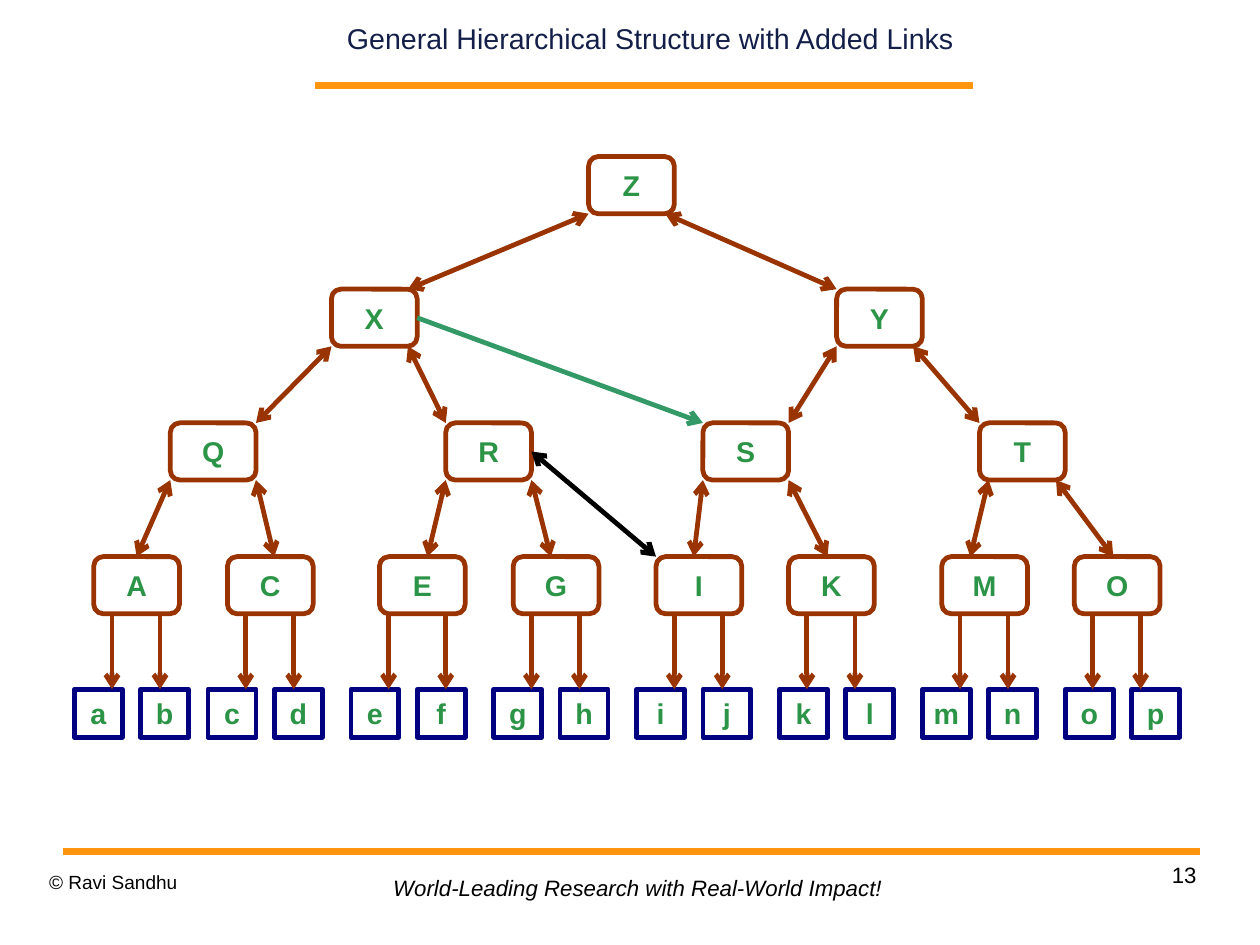
from lxml import etree
from pptx import Presentation
from pptx.dml.color import RGBColor
from pptx.enum import shapes, text
from pptx.oxml import ns
from pptx.util import Inches, Pt

BROWN, NAVY, ORANGE = "993300", "000080", "FF950E"
LEVEL_TOPS = [1.37, 2.53, 3.7, 4.87]
LEAF_TOP, LEAF_SIZE, LEAF_PITCH = 6.03, 0.42, 0.58
NODE_WIDTH, NODE_HEIGHT = 0.75, 0.5
NODES = [
    {"Z": 5.15},
    {"X": 2.9, "Y": 7.32},
    {"Q": 1.49, "R": 3.9, "S": 6.15, "T": 8.57},
    {"A": 0.82, "C": 1.99, "E": 3.32, "G": 4.49,
     "I": 5.74, "K": 6.9, "M": 8.24, "O": 9.4},
]
LEAF_PAIRS = {"ab": 0.65, "cd": 1.82, "ef": 3.07, "gh": 4.32,
              "ij": 5.57, "kl": 6.82, "mn": 8.07, "op": 9.32}
LINKS = [
    [(5.15, 3.57), (5.82, 7.32)],
    [(2.9, 2.24), (3.57, 3.9), (7.32, 6.9), (7.99, 8.57)],
    [(1.49, 1.2), (2.24, 2.4), (3.9, 3.74), (4.65, 4.82),
     (6.15, 6.07), (6.9, 7.24), (8.65, 8.49), (9.24, 9.74)],
]


def color(value):
    """Return the colour for a hex string."""
    return RGBColor.from_string(value)


def write(frame, content, size=18, fill="000000", bold=False, italic=False,
          align="LEFT", anchor="TOP", margins=None, wrap=True, spacing=None):
    """Put one formatted paragraph into a text frame."""
    frame.auto_size = text.MSO_AUTO_SIZE.NONE
    frame.word_wrap = wrap
    frame.vertical_anchor = getattr(text.MSO_ANCHOR, anchor)
    if margins is not None:
        frame.margin_left = frame.margin_right = Inches(margins[0])
        frame.margin_top = frame.margin_bottom = Inches(margins[1])
    paragraph = frame.paragraphs[0]
    paragraph.alignment = getattr(text.PP_ALIGN, align)
    paragraph.line_spacing = spacing
    run = paragraph.add_run()
    run.text = content
    run.font.name = "Arial"
    run.font.size = Pt(size)
    run.font.bold = bold
    run.font.italic = italic
    run.font.color.rgb = color(fill)


def add_title(slide, content):
    """Place and fill the title placeholder."""
    title = slide.shapes.title
    title.left, title.top = Inches(2.85), Inches(0.05)
    title.width, title.height = Inches(5.68), Inches(0.56)
    write(title.text_frame, content, fill="131F49", align="CENTER",
          anchor="MIDDLE", margins=(0, 0))


def add_label(slide, content, left, top, width, height, **style):
    """Add a text box with one line of text."""
    box = slide.shapes.add_textbox(Inches(left), Inches(top), Inches(width), Inches(height))
    write(box.text_frame, content, **style)


def add_box(slide, name, left, top, width, height, kind, outline):
    """Add an unfilled box holding a node name."""
    shape = slide.shapes.add_shape(kind, Inches(left), Inches(top), Inches(width), Inches(height))
    shape.shadow.inherit = False
    shape.fill.background()
    shape.line.color.rgb = color(outline)
    shape.line.width = Pt(3)
    write(shape.text_frame, name, fill="2C9447", bold=True, align="CENTER",
          anchor="MIDDLE", wrap=False)
    return shape


def add_line(slide, start, end, stroke=BROWN, width=3, ends=()):
    """Add a straight line with arrowheads at the named ends."""
    line = slide.shapes.add_connector(
        shapes.MSO_CONNECTOR.STRAIGHT, *map(Inches, start + end))
    line.line.color.rgb = color(stroke)
    line.line.width = Pt(width)
    outline = line.line._get_or_add_ln()
    for end_name in ends:
        etree.SubElement(outline, ns.qn(f"a:{end_name}"), type="arrow")
    etree.SubElement(line._element.spPr, ns.qn("a:effectLst"))
    return line


def add_nodes(slide):
    """Add the inner nodes of the tree and return them by name."""
    return {
        name: add_box(slide, name, left, top, NODE_WIDTH, NODE_HEIGHT,
                      shapes.MSO_SHAPE.ROUNDED_RECTANGLE, BROWN)
        for top, level in zip(LEVEL_TOPS, NODES)
        for name, left in level.items()
    }


def add_leaves(slide):
    """Add each pair of leaves with the arrows from its parent."""
    for (parent, parent_left), (pair, left) in zip(NODES[-1].items(), LEAF_PAIRS.items()):
        offsets = (0.08 if parent == "E" else 0.16, 0.58)
        for index, (leaf, offset) in enumerate(zip(pair, offsets)):
            add_box(slide, leaf, left + index * LEAF_PITCH, LEAF_TOP,
                    LEAF_SIZE, LEAF_SIZE, shapes.MSO_SHAPE.RECTANGLE, NAVY)
            x = parent_left + offset
            add_line(slide, (x, LEVEL_TOPS[-1] + NODE_HEIGHT), (x, LEAF_TOP), ends=["tailEnd"])


def add_links(slide, nodes):
    """Add the links between levels and the two added links."""
    both = ["headEnd", "tailEnd"]
    for upper, lower, links in zip(LEVEL_TOPS, LEVEL_TOPS[1:], LINKS):
        for start, end in links:
            link = add_line(slide, (start, upper + NODE_HEIGHT), (end, lower), ends=both)
            if (start, end) == LINKS[2][0]:
                link.end_connect(nodes["A"], 0)
    x_to_s = add_line(slide, (3.65, 2.78), (6.15, 3.7), "339966", ends=["tailEnd"])
    x_to_s.begin_connect(nodes["X"], 3)
    r_to_i = add_line(slide, (4.65, 3.95), (5.74, 4.87), "000000", ends=both)
    r_to_i.begin_connect(nodes["R"], 3)


def main():
    """Build the slide and save it."""
    presentation = Presentation()
    presentation.slide_width = Pt(793.75)
    presentation.slide_height = Pt(595.25)
    slide = presentation.slides.add_slide(presentation.slide_layouts[5])
    add_line(slide, (2.76, 0.75), (8.51, 0.75), ORANGE, 4.31)
    add_line(slide, (0.55, 7.45), (10.5, 7.45), ORANGE, 4.31)
    add_label(slide, "13", 7.9, 7.53, 2.57, 0.57, size=14, align="RIGHT",
              margins=(0, 0), spacing=1.01)
    add_label(slide, "© Ravi Sandhu", 0.43, 7.61, 2.57, 0.43, size=12,
              margins=(0, 0), spacing=1.01)
    add_label(slide, "World-Leading Research with Real-World Impact!", 3.35, 7.61,
              4.58, 0.33, size=14, italic=True, margins=(0.09, 0.04), wrap=False)
    add_title(slide, "General Hierarchical Structure with Added Links")
    nodes = add_nodes(slide)
    add_leaves(slide)
    add_links(slide, nodes)
    presentation.save("out.pptx")


if __name__ == "__main__":
    main()
